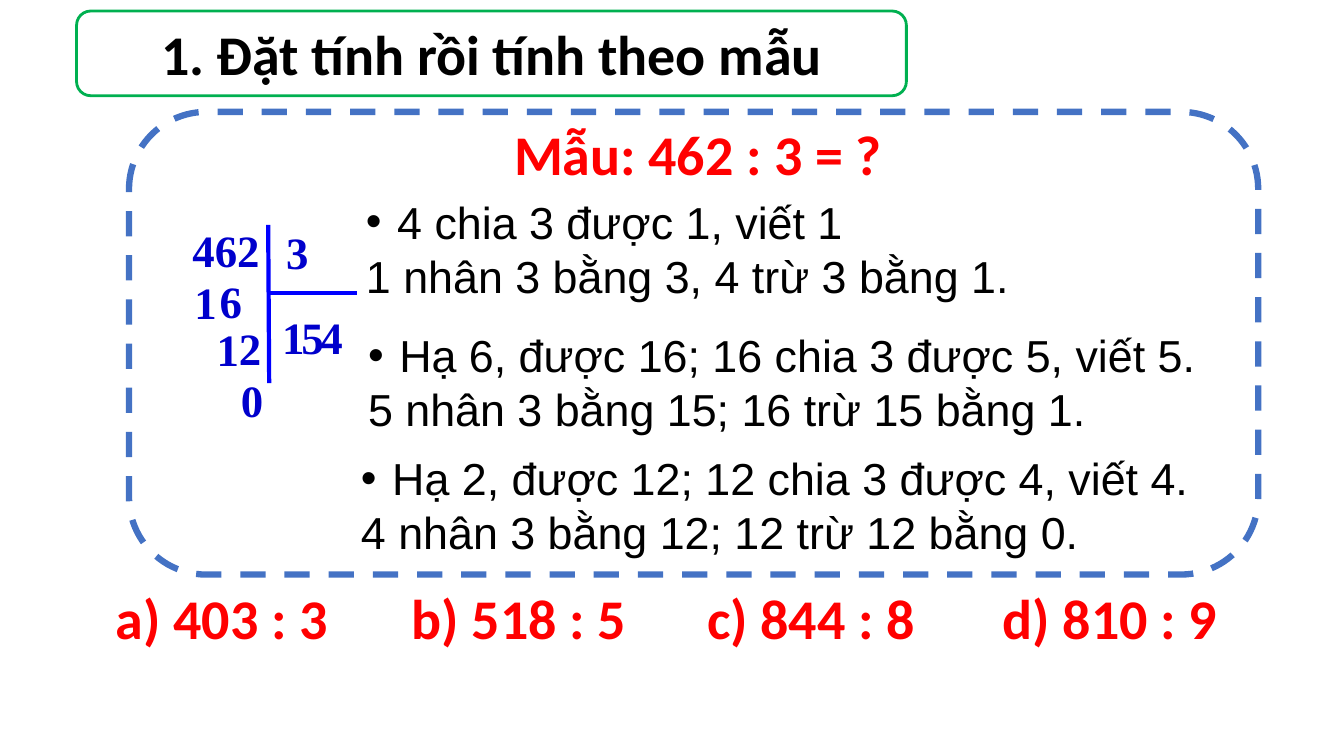
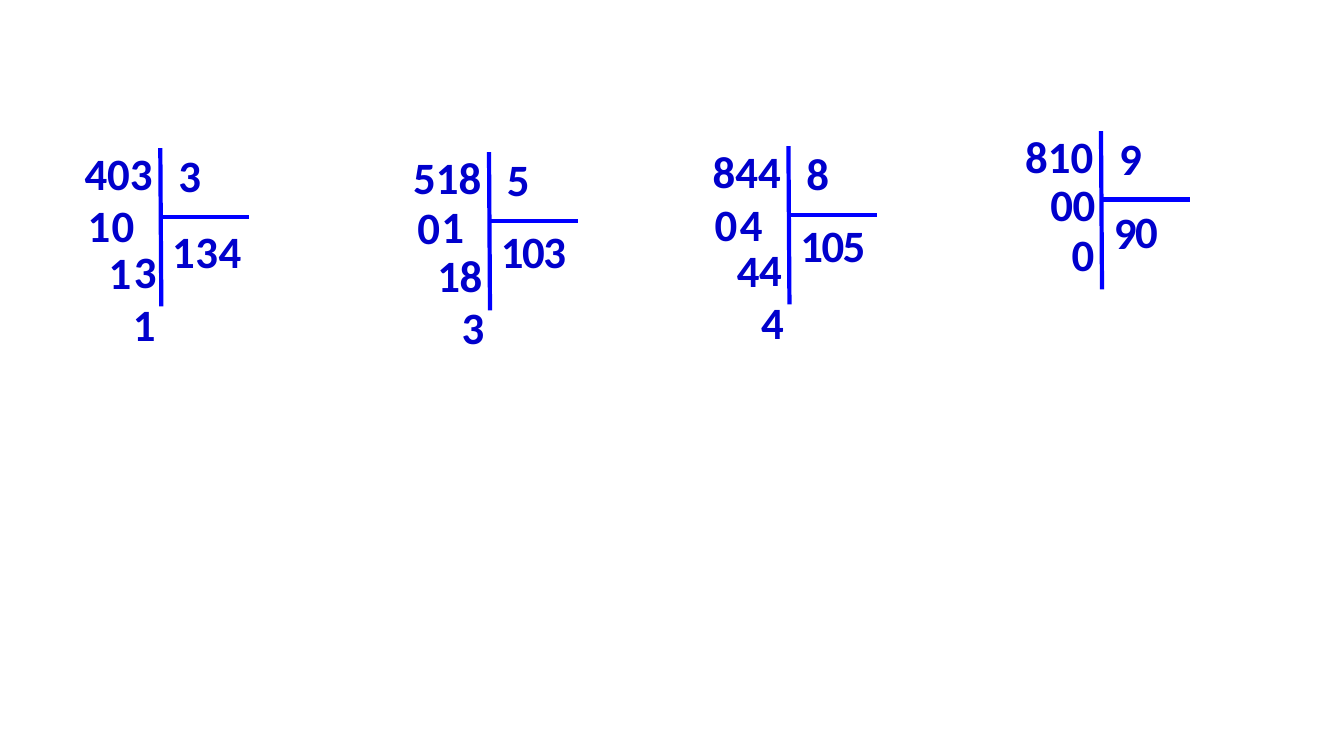
from lxml import etree
from pptx import Presentation
from pptx.dml.color import RGBColor
from pptx.enum.dml import MSO_LINE
from pptx.enum.shapes import MSO_CONNECTOR, MSO_SHAPE
from pptx.enum.text import MSO_ANCHOR, MSO_AUTO_SIZE, PP_ALIGN
from pptx.oxml.ns import qn
from pptx.util import Inches, Pt

STRAIGHT = MSO_CONNECTOR.STRAIGHT
ROUNDED = MSO_SHAPE.ROUNDED_RECTANGLE
DASH = MSO_LINE.DASH
MIDDLE = MSO_ANCHOR.MIDDLE
NO_FIT = MSO_AUTO_SIZE.NONE
LEFT, CENTER, JUSTIFY = PP_ALIGN.LEFT, PP_ALIGN.CENTER, PP_ALIGN.JUSTIFY

SLIDE_W, SLIDE_H = 13.33, 7.5
TITLE_ONLY, BLANK = 5, 6
BLACK, WHITE, RED, GREEN = "000000", "FFFFFF", "FF0000", "00B050"
DIGIT_BLUE, RULE_BLUE, PANEL_BLUE = "0000CC", "0000FF", "4472C4"
HEADING_SIZE, BODY_SIZE = 40, 32
HEADING_FONT, BODY_FONT, SAMPLE_FONT = "Calibri", "Arial", "Times New Roman"

TITLE_AREA = (0.76, 0.11, 8.23, 0.84)
PANEL_AREA = (1.28, 1.11, 11.2, 4.59)
DIGIT_BOX_W, DIVIDEND_BOX_W, NUMBER_BOX_H = 0.42, 0.96, 0.64
BULLET_INDENT = 0.31


def color(hex_value):
    return RGBColor.from_string(hex_value)


def box(*lengths):
    return [Inches(length) for length in lengths]


def write(paragraph, text, size=BODY_SIZE, font=BODY_FONT, ink=BLACK,
          bold=False, align=LEFT, bullet=False):
    paragraph.alignment = align
    if bullet:
        properties = paragraph._p.get_or_add_pPr()
        properties.set("marL", str(Inches(BULLET_INDENT)))
        properties.set("indent", str(-Inches(BULLET_INDENT)))
        etree.SubElement(properties, qn("a:buFont"), typeface="Arial")
        etree.SubElement(properties, qn("a:buChar"), char="•")
    run = paragraph.add_run()
    run.text = text
    run.font.size = Pt(size)
    run.font.name = font
    run.font.bold = bold
    run.font.color.rgb = color(ink)


def clear_margins(holder):
    """Remove the inner margins of a text frame or a table cell."""
    holder.margin_left = holder.margin_right = 0
    holder.margin_top = holder.margin_bottom = 0


def add_text(slide, left, top, width, height):
    frame = slide.shapes.add_textbox(*box(left, top, width, height)).text_frame
    frame.word_wrap = True
    return frame


def add_frame(slide, area, ink, weight):
    """Add a white rounded rectangle with a coloured outline."""
    frame = slide.shapes.add_shape(ROUNDED, *box(*area))
    frame.shadow.inherit = False
    frame.fill.solid()
    frame.fill.fore_color.rgb = color(WHITE)
    frame.line.color.rgb = color(ink)
    frame.line.width = Pt(weight)
    return frame


def set_title(slide, text):
    border = add_frame(slide, TITLE_AREA, GREEN, 2)
    title = slide.shapes.title
    border._element.addnext(title._element)
    title.left, title.top, title.width, title.height = box(*TITLE_AREA)
    frame = title.text_frame
    frame.auto_size = NO_FIT
    frame.vertical_anchor = MIDDLE
    write(frame.paragraphs[0], text, size=HEADING_SIZE, font=HEADING_FONT,
          bold=True, align=CENTER)


def add_exercises(slide, exercises):
    width = 0.88 * SLIDE_W
    table = slide.shapes.add_table(1, len(exercises), *box(1.15, 5.82, width, 0.67)).table
    table.first_row = table.horz_banding = False
    for cell, exercise in zip(table.rows[0].cells, exercises):
        cell.fill.background()
        clear_margins(cell)
        write(cell.text_frame.paragraphs[0], exercise, size=HEADING_SIZE,
              font=HEADING_FONT, ink=RED, bold=True, align=JUSTIFY)


def add_step(slide, left, top, question, check):
    frame = add_text(slide, left, top, 9.01, 1.08)
    clear_margins(frame)
    write(frame.paragraphs[0], question, bullet=True)
    write(frame.add_paragraph(), check)


def add_rule(slide, *ends):
    rule = slide.shapes.add_connector(STRAIGHT, *box(*ends))
    rule.line.color.rgb = color(RULE_BLUE)
    rule.line.width = Pt(3)
    etree.SubElement(rule._element.spPr, qn("a:effectLst"))


def place_digits(text, left, top, pitch=0, rise=0):
    """List each digit with its position, along a row that may climb a little."""
    return [(left + i * pitch, top - i * rise, digit) for i, digit in enumerate(text)]


def add_division(slide, left, top, dividend, divisor, quotient, remainders,
                 font=HEADING_FONT):
    """Draw a long division whose upright rule starts at left, top.

    The quotient and each remainder are arguments of place_digits.
    """
    def number(x, y, text, width=DIGIT_BOX_W):
        frame = add_text(slide, x, y, width, NUMBER_BOX_H)
        write(frame.paragraphs[0], text, font=font, ink=DIGIT_BLUE, bold=True)

    number(left + 0.08, top - 0.05, divisor)
    number(left - 0.85, top - 0.07, dividend, DIVIDEND_BOX_W)
    add_rule(slide, left - 0.01, top + 0.68, left + 0.88, top + 0.68)
    add_rule(slide, left, top, left + 0.01, top + 1.57)
    for step, (quotient_digit, remainder) in enumerate(
            zip(place_digits(*quotient), remainders)):
        number(*quotient_digit)
        # In the first step the digit brought down comes before the remainder
        digits = place_digits(*remainder)
        for digit in digits if step else reversed(digits):
            number(*digit)


def build_sample(prs):
    slide = prs.slides.add_slide(prs.slide_layouts[TITLE_ONLY])
    set_title(slide, "1. Đặt tính rồi tính theo mẫu")
    add_exercises(slide, ["a) 403 : 3", "b) 518 : 5", "c) 844 : 8", "d) 810 : 9"])
    add_frame(slide, PANEL_AREA, PANEL_BLUE, 4.5).line.dash_style = DASH
    add_division(slide, 2.66, 2.23, "462", "3", ("154", 2.7, 3.02, 0.19),
                 [("16", 1.83, 2.68, 0.25, 0.01), ("12", 2.05, 3.14, 0.22, 0.01),
                  ("0", 2.29, 3.65)], font=SAMPLE_FONT)
    steps = [
        (3.63, 1.93, "4 chia 3 được 1, viết 1", "1 nhân 3 bằng 3, 4 trừ 3 bằng 1."),
        (3.65, 3.25, "Hạ 6, được 16; 16 chia 3 được 5, viết 5.",
         "5 nhân 3 bằng 15; 16 trừ 15 bằng 1."),
        (3.58, 4.47, "Hạ 2, được 12; 12 chia 3 được 4, viết 4.",
         "4 nhân 3 bằng 12; 12 trừ 12 bằng 0."),
    ]
    for step in steps:
        add_step(slide, *step)
    question = add_text(slide, 5, 1.14, 6.96, 0.77)
    write(question.paragraphs[0], "Mẫu: 462 : 3 = ?", size=HEADING_SIZE,
          font=HEADING_FONT, ink=RED, bold=True)


def build_answers(prs):
    slide = prs.slides.add_slide(prs.slide_layouts[BLANK])
    answers = [
        (1.59, 1.47, "403", "3", ("134", 1.61, 2.17, 0.23),
         [("10", 0.77, 1.91, 0.24), ("13", 0.98, 2.38, 0.25, 0.01), ("1", 1.22, 2.89)]),
        (4.85, 1.51, "518", "5", ("103", 4.87, 2.17, 0.21),
         [("01", 4.04, 1.93, 0.24, 0.01), ("18", 4.24, 2.41, 0.22), ("3", 4.48, 2.92)]),
        (7.82, 1.45, "844", "8", ("105", 7.84, 2.11, 0.21),
         [("04", 6.99, 1.9, 0.25), ("44", 7.21, 2.36, 0.22, 0.01), ("4", 7.45, 2.87)]),
        (10.92, 1.3, "810", "9", ("90", 10.95, 1.98, 0.21, 0.01),
         [("00", 10.32, 1.7, 0.22), ("0", 10.53, 2.2)]),
    ]
    for answer in answers:
        add_division(slide, *answer)


def main():
    prs = Presentation()
    prs.slide_width, prs.slide_height = box(SLIDE_W, SLIDE_H)
    build_sample(prs)
    build_answers(prs)
    prs.save("out.pptx")


if __name__ == "__main__":
    main()
